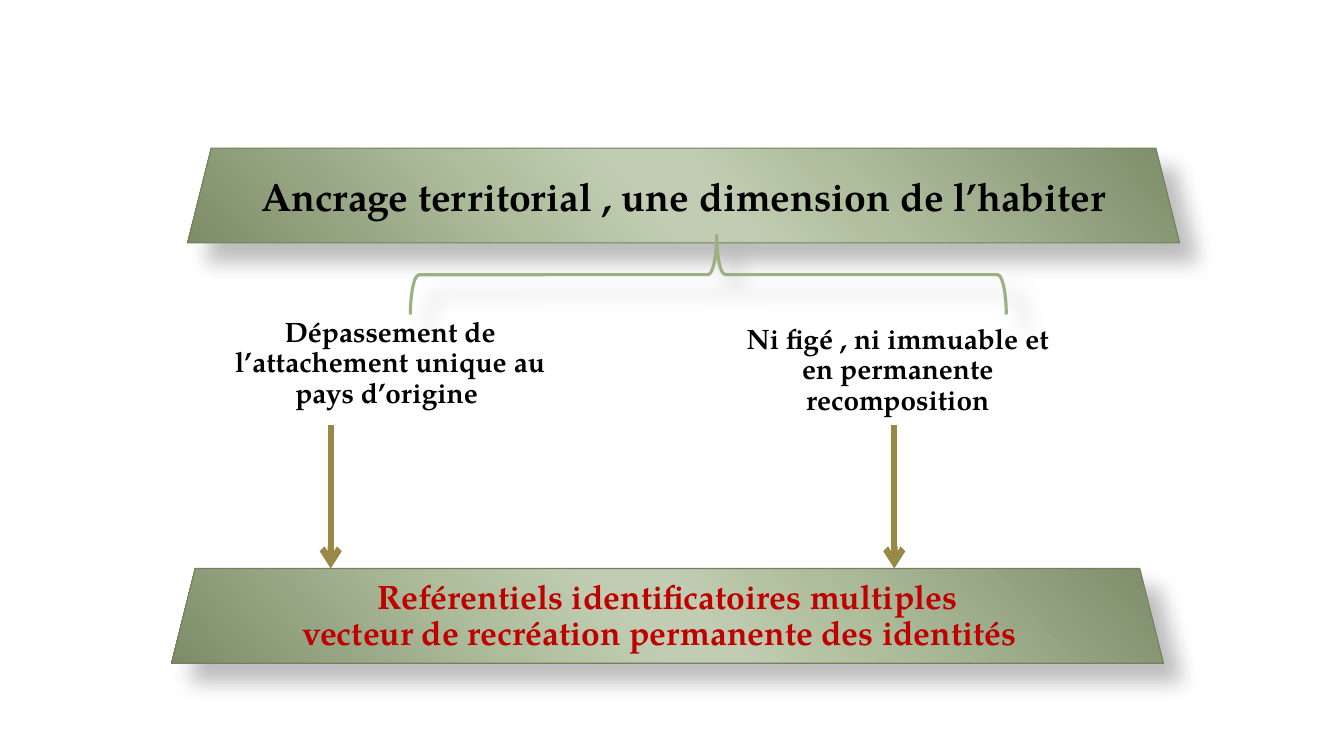
from dataclasses import dataclass

import pptx
import pptx.dml.color
import pptx.enum.shapes
import pptx.enum.text
import pptx.oxml
import pptx.oxml.ns
import pptx.util
from pptx.util import Inches


@dataclass(frozen=True)
class Theme:
    font: str = "TeX Gyre Pagella"
    ink: str = "000000"
    accent: str = "C00000"
    edge: str = "72825E"
    brace: str = "9CB084"
    arrow: str = "998946"
    title_size: int = 28
    closing_size: int = 24
    idea_size: int = 20
    banner_stops: tuple[tuple[int, str], ...] = (
        (0, "7D8D6A"), (33, "AEBD9C"), (47, "C0CDB2"),
        (53, "C0CDB2"), (68, "AEBE9D"), (100, "7D8D6A"),
    )
    banner_angle: int = 139


@dataclass(frozen=True)
class Banner:
    left: float
    top: float
    lines: tuple[str, ...]
    size: int
    color: str
    spacing: float
    last_indent: float = 0


@dataclass(frozen=True)
class Idea:
    left: float
    top: float
    width: float
    text: str
    arrow_x: float


THEME = Theme()
BANNER_WIDTH, BANNER_HEIGHT = 9.84, 0.94
IDEA_HEIGHT = 1.01
ARROW_TOP, CLOSING_TOP = 4.22, 5.64
TIGHT = 0.9

TITLE = Banner(1.86, 1.47, ("Ancrage territorial , une dimension de l’habiter",),
               THEME.title_size, THEME.ink, 1.0)
CLOSING = Banner(1.7, CLOSING_TOP,
                 ("Reférentiels identificatoires multiples",
                  "vecteur de recréation permanente des identités"),
                 THEME.closing_size, THEME.accent, TIGHT, 0.16)
IDEAS = (
    Idea(2.1, 3.11, 3.54, "Dépassement de l’attachement unique au pays d’origine ", 3.28),
    Idea(7.29, 3.18, 3.23, "Ni figé , ni immuable et en permanente recomposition", 8.87),
)


def rgb(color: str) -> pptx.dml.color.RGBColor:
    return pptx.dml.color.RGBColor.from_string(color)


def xml(source: str):
    namespace = pptx.oxml.ns.nsdecls("a")
    return pptx.oxml.parse_xml(source.replace("@ns", namespace))


def set_line(line, color: str, width: float) -> None:
    line.color.rgb = rgb(color)
    line.width = pptx.util.Pt(width)


def cast_shadow(shape) -> None:
    shape.shadow.inherit = False
    effects = shape._element.spPr.find(pptx.oxml.ns.qn("a:effectLst"))
    effects.append(xml(
        f'<a:outerShdw @ns blurRad="{pptx.util.Pt(15)}" dist="{pptx.util.Pt(18)}" '
        'dir="2700000" algn="tl" rotWithShape="0">'
        '<a:srgbClr val="000000"><a:alpha val="26000"/></a:srgbClr></a:outerShdw>'))


def fill_banner(fill) -> None:
    fill.gradient()
    fill.gradient_angle = 360 - THEME.banner_angle
    stops = fill._xPr.find(pptx.oxml.ns.qn("a:gradFill")).gsLst
    for stop in list(stops):
        stops.remove(stop)
    for position, color in THEME.banner_stops:
        stops.append(xml(f'<a:gs @ns pos="{position * 1000}"><a:srgbClr val="{color}"/></a:gs>'))


def write(frame, lines: tuple[str, ...], size: int, color: str, spacing: float) -> None:
    frame.word_wrap = True
    frame.text = "\n".join(lines)
    for paragraph in frame.paragraphs:
        paragraph.alignment = pptx.enum.text.PP_ALIGN.CENTER
        paragraph.line_spacing = spacing
        for run in paragraph.runs:
            run.font.name = THEME.font
            run.font.size = pptx.util.Pt(size)
            run.font.bold = True
            run.font.color.rgb = rgb(color)


def draw_banner(slide, banner: Banner) -> None:
    panel = slide.shapes.add_shape(
        pptx.enum.shapes.MSO_SHAPE.TRAPEZOID, Inches(banner.left), Inches(banner.top),
        Inches(BANNER_WIDTH), Inches(BANNER_HEIGHT))
    fill_banner(panel.fill)
    set_line(panel.line, THEME.edge, 0.75)
    cast_shadow(panel)
    frame = panel.text_frame
    frame.vertical_anchor = pptx.enum.text.MSO_ANCHOR.MIDDLE
    write(frame, banner.lines, banner.size, banner.color, banner.spacing)
    if banner.last_indent:
        properties = frame.paragraphs[-1]._p.get_or_add_pPr()
        properties.set("marR", str(Inches(banner.last_indent)))


def draw_brace(slide) -> None:
    brace = slide.shapes.add_shape(
        pptx.enum.shapes.MSO_SHAPE.LEFT_BRACE,
        Inches(6.63), Inches(-0.23), Inches(0.79), Inches(5.91))
    brace.rotation = 90
    brace.adjustments[0] = 0.11
    brace.adjustments[1] = 0.486
    brace.fill.background()
    set_line(brace.line, THEME.brace, 2.25)
    cast_shadow(brace)


def draw_idea(slide, idea: Idea) -> None:
    label = slide.shapes.add_textbox(
        Inches(idea.left), Inches(idea.top), Inches(idea.width), Inches(IDEA_HEIGHT))
    write(label.text_frame, (idea.text,), THEME.idea_size, THEME.ink, TIGHT)


def draw_arrow(slide, idea: Idea) -> None:
    arrow = slide.shapes.add_connector(
        pptx.enum.shapes.MSO_CONNECTOR.STRAIGHT, Inches(idea.arrow_x), Inches(ARROW_TOP),
        Inches(idea.arrow_x), Inches(CLOSING_TOP))
    set_line(arrow.line, THEME.arrow, 4.5)
    arrow.line._get_or_add_ln().append(xml('<a:tailEnd @ns type="arrow"/>'))
    arrow._element.spPr.append(xml("<a:effectLst @ns/>"))


def main() -> None:
    deck = pptx.Presentation()
    deck.slide_width, deck.slide_height = Inches(13.33), Inches(7.5)
    slide = deck.slides.add_slide(deck.slide_layouts[6])
    draw_banner(slide, TITLE)
    for idea in IDEAS:
        draw_idea(slide, idea)
    draw_brace(slide)
    draw_banner(slide, CLOSING)
    for idea in IDEAS:
        draw_arrow(slide, idea)
    deck.save("out.pptx")


if __name__ == "__main__":
    main()
